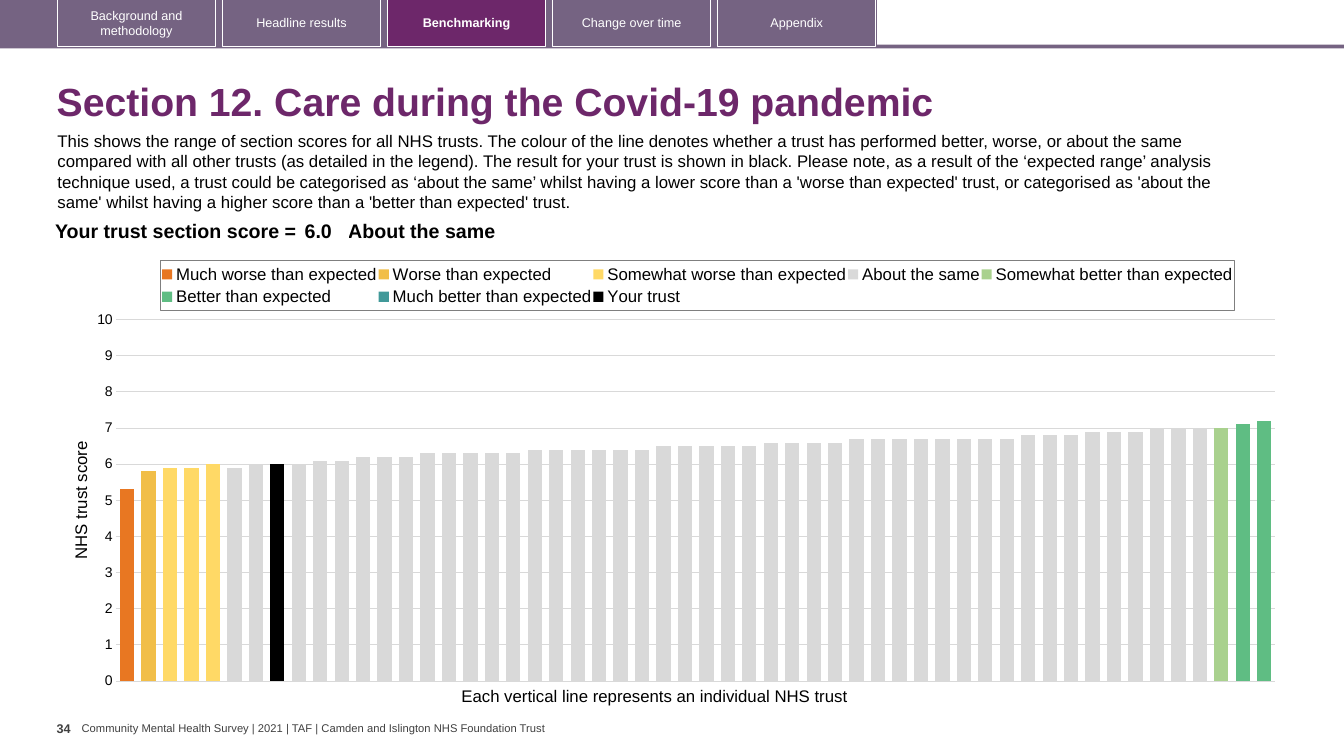
from copy import deepcopy

from pptx import Presentation
from pptx.chart.axis import ValueAxis
from pptx.chart.data import CategoryChartData
from pptx.dml.color import RGBColor
from pptx.enum.chart import XL_CHART_TYPE, XL_LEGEND_POSITION, XL_TICK_LABEL_POSITION, XL_TICK_MARK
from pptx.enum.shapes import MSO_SHAPE
from pptx.enum.text import MSO_ANCHOR, PP_ALIGN
from pptx.oxml import parse_xml
from pptx.oxml.ns import nsdecls, qn
from pptx.util import Pt

HUES = {
    "plum": "6D276A", "mauve": "756382", "white": "FFFFFF", "black": "000000",
    "text": "404040", "grid": "D9D9D9", "axis": "595959", "frame": "7F7F7F",
}
TABS = ["Background and methodology", "Headline results", "Benchmarking", "Change over time", "Appendix"]
ACTIVE = "Benchmarking"
COUNT = 54
SAME = [(5.9, 1), (6, 3), (6.1, 2), (6.2, 3), (6.3, 5), (6.4, 6), (6.5, 5),
        (6.6, 4), (6.7, 8), (6.8, 3), (6.9, 3), (7, 3)]
SERIES = [
    ("Much worse than expected", "E87722", 1, [5.3]),
    ("Worse than expected", "F1BE48", 2, [5.8]),
    ("Somewhat worse than expected", "FFD966", 3, [5.9, 5.9, 6]),
    ("About the same", "D9D9D9", 6, [score for score, times in SAME for _ in range(times)]),
    ("Somewhat better than expected", "A9D18E", 52, [7]),
    ("Better than expected", "5FBD83", 53, [7.1, 7.2]),
    ("Much better than expected", "419999", 1, []),
    ("Your trust", "000000", 8, [6]),
]
INTRO = (
    "This shows the range of section scores for all NHS trusts. The colour of the line denotes "
    "whether a trust has performed better, worse, or about the same compared with all other trusts "
    "(as detailed in the legend). The result for your trust is shown in black. Please note, as a "
    "result of the ‘expected range’ analysis technique used, a trust could be categorised as "
    "‘about the same’ whilst having a lower score than a 'worse than expected' trust, or categorised "
    "as 'about the same' whilst having a higher score than a 'better than expected' trust."
)


def style(font, size, hue="black", bold=False, face="Arial"):
    font.name = face
    font.size = Pt(size)
    font.bold = bold
    font.color.rgb = RGBColor.from_string(HUES[hue])


def write(frame, text, size, hue="black", bold=False, align=None):
    para = frame.paragraphs[0]
    para.alignment = align
    run = para.add_run()
    run.text = text
    style(run.font, size, hue, bold)
    return para


def add_text(slide, box, text, size, hue="black", bold=False, wrap=False, side=7.2, edge=3.6, anchor=MSO_ANCHOR.TOP):
    frame = slide.shapes.add_textbox(*map(Pt, box)).text_frame
    frame.word_wrap = wrap
    frame.margin_left = frame.margin_right = Pt(side)
    frame.margin_top = frame.margin_bottom = Pt(edge)
    frame.vertical_anchor = anchor
    write(frame, text, size, hue, bold)


def add_block(slide, box, fill=None, line=None):
    block = slide.shapes.add_shape(MSO_SHAPE.RECTANGLE, *map(Pt, box))
    block.shadow.inherit = False
    if fill:
        block.fill.solid()
        block.fill.fore_color.rgb = RGBColor.from_string(HUES[fill])
    else:
        block.fill.background()
    if line:
        block.line.color.rgb = RGBColor.from_string(HUES[line])
        block.line.width = Pt(0.75)
    else:
        block.line.fill.background()
    return block


def add_tabs(slide):
    add_block(slide, (-2, 31.8, 962, 2.8), "mauve")
    add_block(slide, (-2, 0, 628.5, 33.8), "mauve")
    for step, name in enumerate(TABS):
        live = name == ACTIVE
        tab = add_block(slide, (41 + 117.9 * step, -0.5, 113, 33.8), "plum" if live else None, "white")
        tab.text_frame.word_wrap = True
        tab.text_frame.vertical_anchor = MSO_ANCHOR.MIDDLE
        write(tab.text_frame, name, 9, "white", live, PP_ALIGN.CENTER)


def add_title(slide, text):
    title = slide.shapes.title
    title.left, title.top, title.width, title.height = map(Pt, (33.3, 48.2, 899, 52))
    title.text_frame.word_wrap = True
    title.text_frame.vertical_anchor = MSO_ANCHOR.MIDDLE
    write(title.text_frame, text, 28, "plum", True, PP_ALIGN.LEFT).line_spacing = 0.9


def add_score(slide):
    cells = [
        ("Your trust section score =", 189.5, 2.9, PP_ALIGN.RIGHT),
        ("6.0", 34, 2.9, PP_ALIGN.LEFT),
        ("About the same", 618.5, 0, PP_ALIGN.LEFT),
    ]
    table = slide.shapes.add_table(1, len(cells), Pt(25.2), Pt(154.8), Pt(842), Pt(16)).table
    table.first_row = table.horz_banding = False
    for spot, (text, width, side, align) in enumerate(cells):
        table.columns[spot].width = Pt(width)
        cell = table.cell(0, spot)
        cell.fill.background()
        cell.margin_left = cell.margin_right = Pt(side)
        cell.margin_top = cell.margin_bottom = Pt(2.9)
        write(cell.text_frame, text, 14, "black", True, align)


def layout(x, y, w, h, inner=False):
    target = '<c:layoutTarget val="inner"/>' if inner else ""
    sizes = "".join(f'<c:{key} val="{val}"/>' for key, val in zip("xywh", (x, y, w, h)))
    return parse_xml(
        f'<c:layout {nsdecls("c")}><c:manualLayout>{target}<c:xMode val="edge"/>'
        f'<c:yMode val="edge"/>{sizes}</c:manualLayout></c:layout>'
    )


def set_plot(area):
    for old in area.findall(qn("c:layout")):
        area.remove(old)
    area.insert(0, layout(0.04, 0.158, 0.946, 0.808, True))


def set_legend(chart):
    chart.has_legend = True
    legend = chart.legend
    legend.position = XL_LEGEND_POSITION.TOP
    legend.include_in_layout = False
    style(legend.font, 12)
    node = legend._element
    for old in node.findall(qn("c:layout")):
        node.remove(old)
    node.find(qn("c:legendPos")).addnext(layout(0.076, 0.027, 0.877, 0.11))
    node.find(qn("c:overlay")).addnext(parse_xml(
        f'<c:spPr {nsdecls("c", "a")}><a:ln w="9525"><a:solidFill>'
        f'<a:srgbClr val="{HUES["frame"]}"/></a:solidFill></a:ln></c:spPr>'
    ))


def split_last(area):
    bars = area.find(qn("c:barChart"))
    twin = deepcopy(bars)
    series = bars.findall(qn("c:ser"))
    bars.remove(series[-1])
    for extra in twin.findall(qn("c:ser"))[:-1]:
        twin.remove(extra)
    bars.addnext(twin)
    cats, vals = area.find(qn("c:catAx")), area.find(qn("c:valAx"))
    base, right = deepcopy(cats), deepcopy(vals)
    vals.addnext(base)
    base.addnext(right)
    for node, first, other in ((base, "101", "102"), (right, "102", "101")):
        node.find(qn("c:axId")).set("val", first)
        node.find(qn("c:crossAx")).set("val", other)
    for node, key in zip(twin.findall(qn("c:axId")), ("101", "102")):
        node.set("val", key)
    right.find(qn("c:axPos")).set("val", "r")
    right.find(qn("c:crosses")).set("val", "max")
    axis = ValueAxis(right)
    axis.has_major_gridlines = False
    axis.major_tick_mark = XL_TICK_MARK.OUTSIDE
    axis.tick_label_position = XL_TICK_LABEL_POSITION.NONE
    style(axis.tick_labels.font, 12, "axis", face="Calibri")


def add_scores(slide):
    data = CategoryChartData()
    data.categories = [str(rank) for rank in range(1, COUNT + 1)]
    for name, _, start, scores in SERIES:
        before = [None] * (start - 1)
        data.add_series(name, before + scores + [None] * (COUNT - len(before) - len(scores)))
    box = map(Pt, (48.2, 177.8, 874.8, 319.7))
    chart = slide.shapes.add_chart(XL_CHART_TYPE.COLUMN_CLUSTERED, *box, data).chart
    chart.has_title = False
    style(chart.font, 10, face="Calibri")
    plot = chart.plots[0]
    plot.gap_width, plot.overlap, plot.vary_by_categories = 50, 100, False
    for series, (_, hue, _, _) in zip(plot.series, SERIES):
        series.invert_if_negative = False
        series.format.fill.solid()
        series.format.fill.fore_color.rgb = RGBColor.from_string(hue)
    chart.category_axis.visible = False
    axis = chart.value_axis
    axis.minimum_scale, axis.maximum_scale, axis.major_unit = 0, 10, 1
    axis.major_tick_mark = axis.minor_tick_mark = XL_TICK_MARK.NONE
    axis.format.line.fill.background()
    axis.tick_labels.number_format = "0"
    axis.tick_labels.number_format_is_linked = False
    style(axis.tick_labels.font, 10)
    area = chart._chartSpace.chart.plotArea
    split_last(area)
    grid = axis.major_gridlines.format.line
    grid.color.rgb = RGBColor.from_string(HUES["grid"])
    grid.width = Pt(0.75)
    write(axis.axis_title.text_frame, "NHS trust score", 12)
    set_legend(chart)
    set_plot(area)


def main():
    deck = Presentation()
    deck.slide_width, deck.slide_height = Pt(960), Pt(540)
    slide = deck.slides.add_slide(deck.slide_layouts[5])
    add_tabs(slide)
    add_title(slide, "Section 12. Care during the Covid-19 pandemic")
    add_text(slide, (34, 90, 873, 65.5), INTRO, 12, wrap=True)
    add_scores(slide)
    add_text(slide, (322.5, 486, 296, 21.6), "Each vertical line represents an individual NHS trust", 12)
    add_score(slide)
    add_text(slide, (40.5, 511.2, 18, 28.8), "34", 9, "text", True, side=0)
    add_text(slide, (58.3, 515.5, 336, 9.4),
             "Community Mental Health Survey | 2021 | TAF | Camden and Islington NHS Foundation Trust",
             8, "text", side=0, edge=0, anchor=MSO_ANCHOR.MIDDLE)
    deck.save("out.pptx")


if __name__ == "__main__":
    main()
